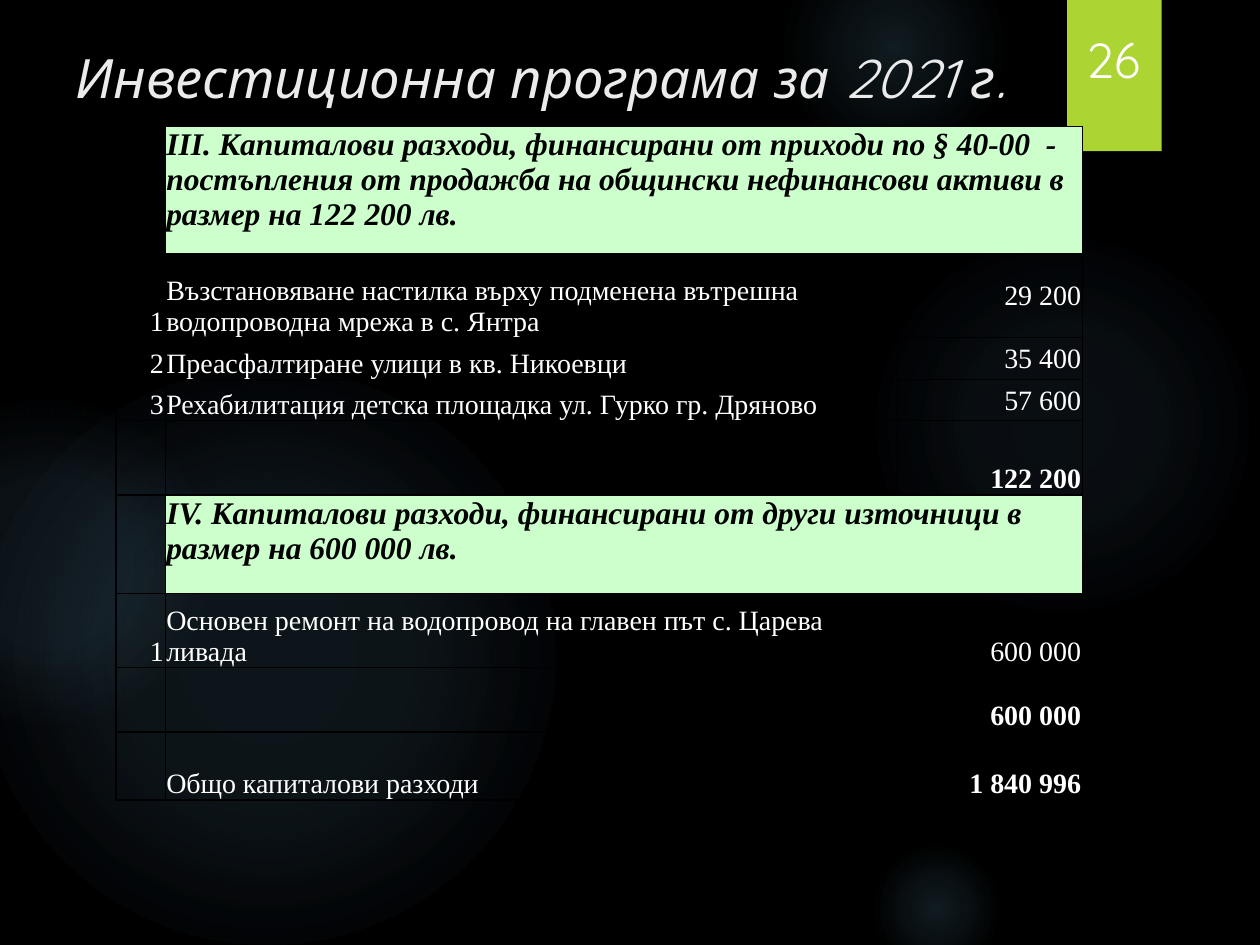
"""Build the 2021 investment programme slide with its capital expenditure table."""
from dataclasses import dataclass

from lxml import etree
from pptx import Presentation
from pptx.dml.color import RGBColor
from pptx.enum.shapes import MSO_SHAPE
from pptx.enum.text import MSO_ANCHOR, MSO_AUTO_SIZE, PP_ALIGN
from pptx.oxml import parse_xml
from pptx.oxml.ns import nsdecls, qn
from pptx.util import Inches, Pt

OVAL, RECT = MSO_SHAPE.OVAL, MSO_SHAPE.RECTANGLE
TOP, MIDDLE, BOTTOM = MSO_ANCHOR.TOP, MSO_ANCHOR.MIDDLE, MSO_ANCHOR.BOTTOM
LEFT, CENTER, RIGHT = PP_ALIGN.LEFT, PP_ALIGN.CENTER, PP_ALIGN.RIGHT
NO_AUTOFIT = MSO_AUTO_SIZE.NONE


@dataclass(frozen=True)
class Theme:
    back: str = "000000"
    glow: str = "7AC4F0"
    accent: str = "ACD433"
    section: str = "CCFFCC"
    title: str = "EBEBEB"
    light: str = "FFFFFF"
    dark: str = "000000"
    head_font: str = "Quicksand"
    body_font: str = "Times New Roman"
    title_size: float = 31
    number_size: float = 28
    section_size: float = 18
    body_size: float = 16


@dataclass(frozen=True)
class Glow:
    left: float
    top: float
    size: float
    inner: int
    middle: int
    fade: int


@dataclass(frozen=True)
class Row:
    height: float
    number: str = ""
    text: str = ""
    amount: str = ""
    section: bool = False
    total: bool = False
    heavy: bool = False
    amount_anchor: MSO_ANCHOR = BOTTOM


THEME = Theme()
GLOWS = [
    Glow(6.89, 1.83, 3.08, 7, 6, 69),
    Glow(6.22, -0.5, 1.75, 14, 7, 73),
    Glow(6.89, 6.67, 1.08, 14, 7, 66),
    Glow(-0.17, 2.92, 4.58, 11, 10, 75),
    Glow(-0.92, 3.17, 2.58, 8, 8, 72),
]
COLUMNS = (0.39, 5.81, 1.47)
ROWS = [
    Row(1.01, text="IІІ. Капиталови разходи, финансирани от приходи по § 40-00  - "
        "постъпления от продажба на общински нефинансови активи в размер на 122 200 лв.",
        section=True),
    Row(0.67, "1", "Възстановяване настилка върху подменена вътрешна водопроводна мрежа "
        "в с. Янтра", "29 200", amount_anchor=MIDDLE),
    Row(0.33, "2", "Преасфалтиране улици в кв. Никоевци", "35 400", amount_anchor=MIDDLE),
    Row(0.33, "3", "Рехабилитация детска площадка ул. Гурко гр. Дряново", "57 600",
        amount_anchor=MIDDLE),
    Row(0.59, amount="122 200", total=True, heavy=True),
    Row(0.78, text="ІV. Капиталови разходи, финансирани от други източници в размер "
        "на 600 000 лв.", section=True),
    Row(0.59, "1", "Основен ремонт на водопровод на главен път с. Царева ливада", "600 000"),
    Row(0.51, amount="600 000", total=True, heavy=True),
    Row(0.54, text="Общо капиталови разходи", amount="1 840 996", total=True, heavy=True),
]


def write(tf, text: str, font: str, size: float, color: str, align=LEFT,
          bold: bool = False, italic: bool = False) -> None:
    """Put one formatted paragraph into a text frame."""
    tf.text = text
    p = tf.paragraphs[0]
    p.alignment = align
    for r in p.runs:
        r.font.name, r.font.size = font, Pt(size)
        r.font.bold, r.font.italic = bold, italic
        r.font.color.rgb = RGBColor.from_string(color)


def add_plain(s, kind, left: float, top: float, width: float, height: float):
    """Add a preset shape without line or shadow."""
    sp = s.shapes.add_shape(kind, *map(Inches, (left, top, width, height)))
    sp.shadow.inherit = False
    sp.line.fill.background()
    return sp


def add_glow(s, glow: Glow) -> None:
    """Add a circle that fades out from its centre."""
    sp = add_plain(s, OVAL, glow.left, glow.top, glow.size, glow.size)
    stops = "".join(
        f'<a:gs pos="{pos * 1000}"><a:srgbClr val="{THEME.glow}">'
        f'<a:alpha val="{alpha * 1000}"/></a:srgbClr></a:gs>'
        for pos, alpha in ((0, glow.inner), (36, glow.middle), (glow.fade, 0)))
    fill = parse_xml(
        f'<a:gradFill {nsdecls("a")}><a:gsLst>{stops}</a:gsLst><a:path path="circle">'
        '<a:fillToRect l="50000" t="50000" r="50000" b="50000"/></a:path></a:gradFill>')
    sp.element.spPr.find(qn("a:prstGeom")).addnext(fill)


def add_number_tab(s, number: str) -> None:
    """Add the green tab and the slide number on it."""
    sp = add_plain(s, RECT, 8.47, 0, 0.75, 1.2)
    sp.fill.solid()
    sp.fill.fore_color.rgb = RGBColor.from_string(THEME.accent)
    sp.element.spPr.find(qn("a:effectLst")).append(parse_xml(
        f'<a:outerShdw {nsdecls("a")} blurRad="{Pt(3)}" dist="{Pt(2)}" dir="5400000">'
        f'<a:srgbClr val="{THEME.dark}"><a:alpha val="45000"/></a:srgbClr></a:outerShdw>'))
    tf = s.shapes.add_textbox(*map(Inches, (7.67, 0.3, 2.33, 0.45))).text_frame
    tf.word_wrap, tf.vertical_anchor = True, BOTTOM
    write(tf, number, THEME.head_font, THEME.number_size, THEME.light, CENTER)


def set_title(s, text: str) -> None:
    """Place the title in front of the background circles."""
    title = s.shapes.title
    title.left, title.top, title.width, title.height = map(Inches, (0.5, 0.3, 9, 1.25))
    tf = title.text_frame
    tf.auto_size, tf.vertical_anchor, tf.word_wrap = NO_AUTOFIT, TOP, True
    write(tf, text, THEME.head_font, THEME.title_size, THEME.title, italic=True)
    title.element.getparent().append(title.element)


def set_borders(cell, **widths: float) -> None:
    """Draw the cell borders, given as points by side in the order L, R, T, B."""
    tc_pr = cell._tc.get_or_add_tcPr()
    for i, (side, width) in enumerate(widths.items()):
        ln = etree.Element(qn(f"a:ln{side}"), w=str(Pt(width)))
        fill = etree.SubElement(ln, qn("a:solidFill"))
        etree.SubElement(fill, qn("a:srgbClr"), val=THEME.dark)
        tc_pr.insert(i, ln)


def fill_row(table, i: int, row: Row) -> None:
    """Fill and format one table row."""
    table.rows[i].height = Inches(row.height)
    last = len(COLUMNS) - 1
    values = ((row.number, RIGHT, BOTTOM), (row.text, LEFT, TOP if row.section else BOTTOM),
              (row.amount, RIGHT, row.amount_anchor))
    for j, (text, align, anchor) in enumerate(values):
        cell = table.cell(i, j)
        cell.margin_left = cell.margin_right = cell.margin_top = Inches(0.01)
        cell.margin_bottom = 0
        cell.vertical_anchor = anchor
        banner = row.section and j > 0
        if banner:
            cell.fill.solid()
            cell.fill.fore_color.rgb = RGBColor.from_string(THEME.section)
        else:
            cell.fill.background()
        set_borders(cell, L=1 if j == 0 else 0.5, R=1 if j == last else 0.5,
                    T=1 if i and ROWS[i - 1].heavy else 0.5, B=1 if row.heavy else 0.5)
        if text:
            write(cell.text_frame, text, THEME.body_font,
                  THEME.section_size if banner else THEME.body_size,
                  THEME.dark if banner else THEME.light, align,
                  bold=banner or (row.total and j == last), italic=banner)
    if row.section:
        table.cell(i, 1).merge(table.cell(i, last))


def add_budget_table(s) -> None:
    """Add the table of capital expenditure."""
    size = (sum(COLUMNS), sum(row.height for row in ROWS))
    table = s.shapes.add_table(len(ROWS), len(COLUMNS),
                               *map(Inches, (0.92, 1, *size))).table
    table.first_row = table.horz_banding = False
    for column, width in zip(table.columns, COLUMNS):
        column.width = Inches(width)
    for i, row in enumerate(ROWS):
        fill_row(table, i, row)


def main() -> None:
    """Build and save the slide."""
    prs = Presentation()
    prs.slide_width, prs.slide_height = Inches(10), Inches(7.5)
    s = prs.slides.add_slide(prs.slide_layouts[5])
    s.background.fill.solid()
    s.background.fill.fore_color.rgb = RGBColor.from_string(THEME.back)
    for glow in GLOWS:
        add_glow(s, glow)
    add_number_tab(s, "26")
    set_title(s, "Инвестиционна програма за 2021 г.")
    add_budget_table(s)
    prs.save("out.pptx")


if __name__ == "__main__":
    main()
